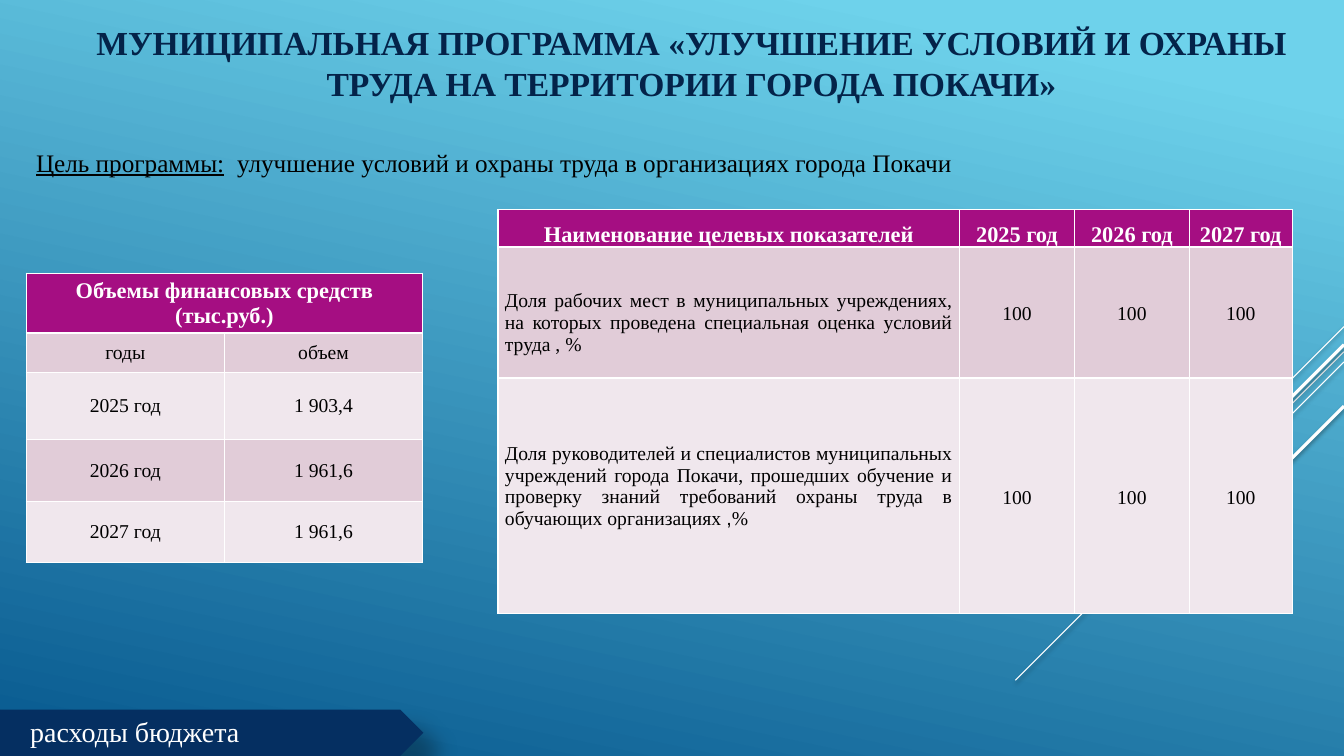
"""Build the slide on the labour safety programme of a town budget."""
import lxml.etree
import pptx
import pptx.dml.color
import pptx.enum.shapes
import pptx.enum.text
import pptx.oxml.ns
import pptx.util

Pt = pptx.util.Pt
Inch = pptx.util.Inches
Side = pptx.enum.text.PP_ALIGN
Hold = pptx.enum.text.MSO_ANCHOR
qn = pptx.oxml.ns.qn


def tint(code):
    return pptx.dml.color.RGBColor.from_string(code)


def put(frame, runs, look, para):
    line = frame.paragraphs[0]
    for key, val in para.items():
        setattr(line, key, val)
    for words, extra in runs:
        run = line.add_run()
        run.text = words
        font = {"name": "Times New Roman", "bold": False, **look, **extra}
        run.font.color.rgb = tint(font.pop("hue"))
        for key, val in font.items():
            setattr(run.font, key, val)


deck = pptx.Presentation()
deck.slide_width, deck.slide_height = Inch(13.333), Inch(7.5)
col, row = deck.slide_width / 100, deck.slide_height / 100
slide = deck.slides.add_slide(deck.slide_layouts[5])
shapes = slide.shapes

back = slide.background.fill
back.gradient()
back.gradient_angle = 258
for stop, (pos, code) in zip(back.gradient_stops, [(0.1, "6ED2EB"), (1, "06588E")]):
    stop.position = pos
    stop.color.rgb = tint(code)

shaded = []
rays = [(43.2, 7.5, 0.75), (46.53, 24.45, 0.75), (47.87, 15.53, 0.75),
        (45.6, 14.33, 2.25), (53.73, 10.43, 2.25)]
for top, run, width in rays:
    ray = shapes.add_connector(
        pptx.enum.shapes.MSO_CONNECTOR.STRAIGHT, int(col * 100), int(row * top),
        int(col * (100 - run)), int(row * top + col * run))
    ray.line.color.rgb = tint("FFFFFF")
    ray.line.width = Pt(width)
    shaded.append((ray, 38, 3.1, 1.6, 90))

title = shapes.title
place = {"left": col * 2.85, "top": row * 1.6, "width": col * 97.2, "height": row * 15.73}
for key, val in place.items():
    setattr(title, key, int(val))
form = {"word_wrap": True, "auto_size": pptx.enum.text.MSO_AUTO_SIZE.NONE,
        "vertical_anchor": Hold.TOP, "margin_top": Inch(0.1)}
for key, val in form.items():
    setattr(title.text_frame, key, val)
name = "МУНИЦИПАЛЬНАЯ ПРОГРАММА «УЛУЧШЕНИЕ УСЛОВИЙ И ОХРАНЫ ТРУДА НА ТЕРРИТОРИИ ГОРОДА ПОКАЧИ»"
put(title.text_frame, [(name, {})], {"size": Pt(24), "bold": True, "hue": "042349"},
    {"alignment": Side.CENTER})

jobs = ("Доля рабочих мест в муниципальных учреждениях, на которых проведена "
        "специальная оценка условий труда , %")
staff = ("Доля руководителей и специалистов муниципальных учреждений города Покачи, "
         "прошедших обучение и проверку знаний требований охраны труда в "
         "обучающих организациях ")
years = ["2025 год", "2026 год", "2027 год"]
funds = [["Объемы финансовых средств (тыс.руб.)", ""], ["годы", "объем"],
         *map(list, zip(years, ["1 903,4", "1 961,6", "1 961,6"]))]
goals = [["Наименование целевых показателей", *years],
         [[(jobs, {})], *["100"] * 3],
         [[(staff, {}), (",", {"name": "Arial"}), ("%", {})], *["100"] * 3]]
grids = [
    (1.95, 36.13, [14.75] * 2, [7.87, 5.2, 8.93, 8.13, 8.13], 0.13, 0.05,
     funds, Hold.MIDDLE, {}, {}),
    (37.05, 27.73, [34.35, 8.55, 8.55, 7.65], [4.93, 17.33, 31.2], 0.07, 0,
     goals, Hold.BOTTOM, {"line_spacing": 1.15}, {"space_after": Pt(10)}),
]
for left, top, wide, high, padx, pady, data, hold, lead, gap in grids:
    table = shapes.add_table(
        len(high), len(wide), int(col * left), int(row * top),
        int(col * sum(wide)), int(row * sum(high))).table
    for part, size in zip(table.columns, wide):
        part.width = int(col * size)
    for part, size in zip(table.rows, high):
        part.height = int(row * size)
    if data is funds:
        table.cell(0, 0).merge(table.cell(0, 1))
    for i, items in enumerate(data):
        for j, item in enumerate(items):
            cell = table.cell(i, j)
            head, long = i == 0, isinstance(item, list)
            drop = 0.215 * (i + 1) if long else pady
            form = {"margin_left": Inch(padx), "margin_right": Inch(padx),
                    "margin_top": Inch(drop), "margin_bottom": Inch(pady),
                    "vertical_anchor": Hold.TOP if long else hold if head else Hold.MIDDLE}
            for key, val in form.items():
                setattr(cell, key, val)
            cell.fill.solid()
            cell.fill.fore_color.rgb = tint(
                "A50E82" if head else "E1CCD8" if i % 2 else "F0E7ED")
            look = {"size": Pt(16 if head else 14), "bold": head,
                    "hue": "FFFFFF" if head else "000000"}
            para = {"alignment": Side.JUSTIFY} if long else {"alignment": Side.CENTER, **lead}
            if head:
                para.update(gap)
            if item:
                put(cell.text_frame, item if long else [(item, {})], look, para)

flag = shapes.add_shape(pptx.enum.shapes.MSO_SHAPE.PENTAGON, 0, int(row * 93.87),
                        int(col * 31.5), int(row * 6.13))
flag.adjustments[0] = 0.5
flag.fill.solid()
flag.fill.fore_color.rgb = tint("052F61")
flag.line.fill.background()
flag.shadow.inherit = False
shaded.append((flag, 30, 15, 18, 45))

aim = [("Цель программы:", {"underline": True}),
       ("  улучшение условий и охраны труда в организациях города Покачи", {})]
notes = [(1.95, 18.8, 97.2, 5.33, aim, 18, "000000", Side.JUSTIFY),
         (1.5, 93.87, 28.35, 5.87, [("расходы бюджета", {})], 20, "FFFFFF", Side.LEFT)]
for left, top, wide, high, runs, size, code, side in notes:
    box = shapes.add_textbox(int(col * left), int(row * top), int(col * wide), int(row * high))
    box.text_frame.word_wrap = True
    put(box.text_frame, runs, {"size": Pt(size), "hue": code}, {"alignment": side})

for shape, alpha, blur, dist, turn in shaded:
    props = shape._element.spPr
    for old in props.findall(qn("a:effectLst")):
        props.remove(old)
    glow = lxml.etree.SubElement(props, qn("a:effectLst"))
    cast = lxml.etree.SubElement(
        glow, qn("a:outerShdw"), blurRad=str(Pt(blur)), dist=str(Pt(dist)),
        dir=str(turn * 60000), algn="ctr", rotWithShape="0")
    shade = lxml.etree.SubElement(cast, qn("a:srgbClr"), val="000000")
    lxml.etree.SubElement(shade, qn("a:alpha"), val=str(alpha * 1000))

deck.save("out.pptx")
